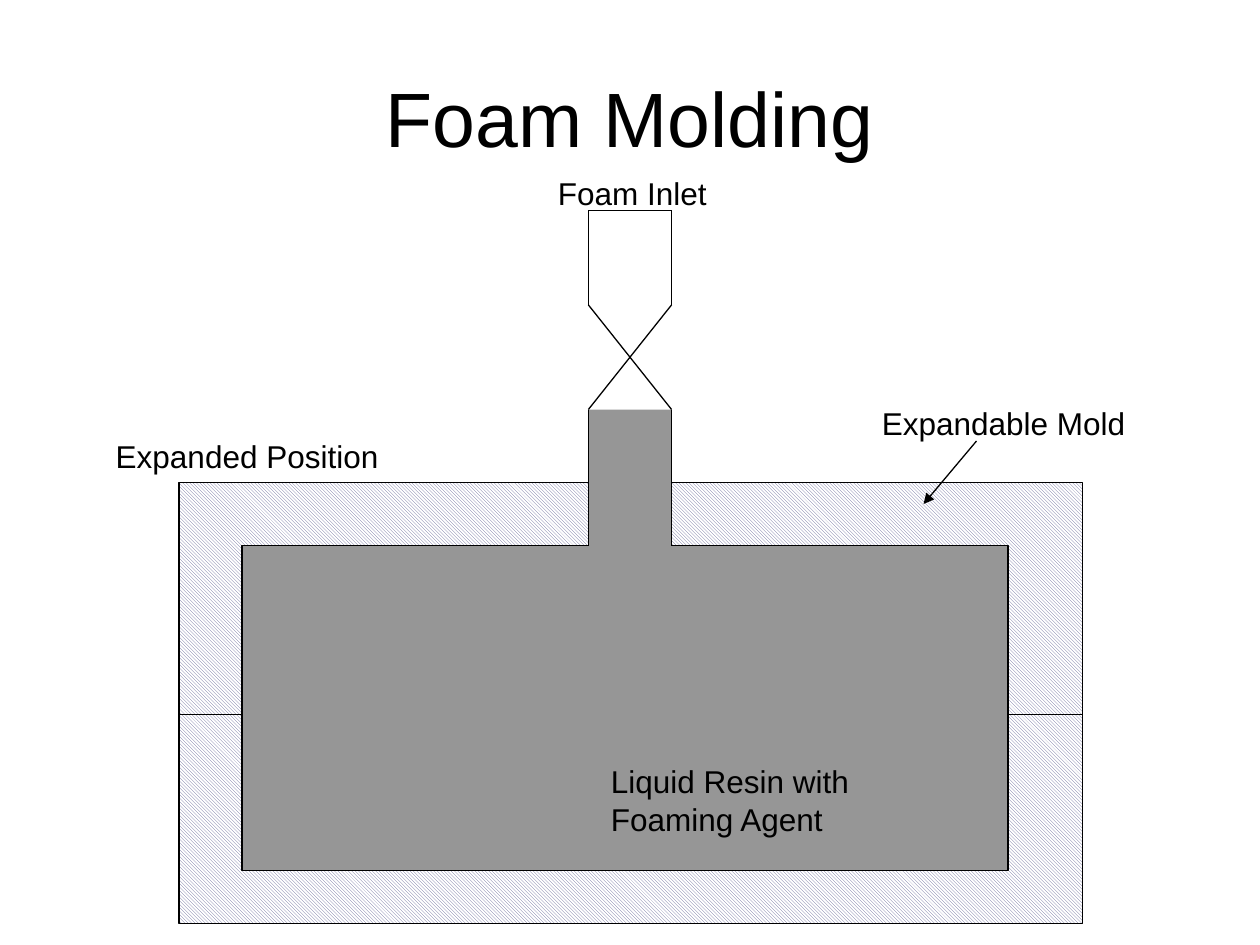
from pptx import Presentation
from pptx.dml.color import RGBColor
from pptx.enum.dml import MSO_PATTERN
from pptx.enum.shapes import MSO_CONNECTOR, MSO_SHAPE
from pptx.enum.text import MSO_ANCHOR, MSO_AUTO_SIZE, PP_ALIGN
from pptx.oxml.ns import qn
from pptx.util import Inches, Pt
from lxml.etree import SubElement

BLACK = RGBColor(0x00, 0x00, 0x00)
WHITE = RGBColor(0xFF, 0xFF, 0xFF)
RESIN_GRAY = RGBColor(0x96, 0x96, 0x96)
MOLD_BLUE = RGBColor(0x66, 0x66, 0x99)
FONT = "Arial"
LINE_WIDTH = Pt(0.75)


def add_line(slide, start, end, arrow=False):
    """Draw a thin black line, optionally with an arrowhead at its end."""
    line = slide.shapes.add_connector(
        MSO_CONNECTOR.STRAIGHT, *map(Inches, (*start, *end)))
    line.line.color.rgb = BLACK
    line.line.width = LINE_WIDTH
    properties = line._element.spPr
    if arrow:
        SubElement(properties.find(qn("a:ln")), qn("a:tailEnd"), type="triangle")
    SubElement(properties, qn("a:effectLst"))


def add_block(slide, left, top, width, height, outlined=True):
    """Draw a gray rectangle with or without a black outline."""
    block = slide.shapes.add_shape(
        MSO_SHAPE.RECTANGLE, *map(Inches, (left, top, width, height)))
    block.shadow.inherit = False
    block.fill.solid()
    block.fill.fore_color.rgb = RESIN_GRAY
    if outlined:
        block.line.color.rgb = BLACK
        block.line.width = LINE_WIDTH
    else:
        block.line.fill.background()
    return block


def add_text(slide, left, top, width, height, lines, size=18):
    """Place lines of black text and return their frame."""
    box = slide.shapes.add_textbox(*map(Inches, (left, top, width, height)))
    frame = box.text_frame
    frame.word_wrap = False
    frame.auto_size = MSO_AUTO_SIZE.SHAPE_TO_FIT_TEXT
    frame.text = "\n".join(lines)
    for paragraph in frame.paragraphs:
        paragraph.font.name = FONT
        paragraph.font.size = Pt(size)
        paragraph.font.color.rgb = BLACK
    return frame


def add_title(slide, left, top, width, height):
    """Place the centred slide title."""
    frame = add_text(slide, left, top, width, height, ["Foam Molding"], size=44)
    frame.auto_size = MSO_AUTO_SIZE.NONE
    frame.word_wrap = True
    frame.vertical_anchor = MSO_ANCHOR.MIDDLE
    frame.paragraphs[0].alignment = PP_ALIGN.CENTER


def add_mold(slide, left, top, width, height):
    """Draw the hatched mold, its resin cavity and the parting lines."""
    right = left + width
    cavity_left, cavity_right = left + 0.5, right - 0.59
    parting = top + 1.84
    mold = add_block(slide, left, top, width, height)
    mold.fill.patterned()
    mold.fill.pattern = MSO_PATTERN.DARK_DOWNWARD_DIAGONAL
    mold.fill.fore_color.rgb = MOLD_BLUE
    mold.fill.back_color.rgb = WHITE
    add_block(slide, cavity_left, top + 0.5, cavity_right - cavity_left, 2.58)
    add_line(slide, (cavity_left, parting), (left, parting))
    add_line(slide, (right, parting), (cavity_right, parting))


def add_inlet(slide, left, top, width, height):
    """Draw the open inlet, the crossed valve and the filled channel."""
    right = left + width
    valve_top, valve_bottom = top + 0.75, top + 1.58
    cavity_top = top + height
    add_block(slide, left, valve_bottom, width, 1.42, outlined=False)
    for side, opposite in ((left, right), (right, left)):
        add_line(slide, (side, cavity_top), (side, valve_bottom))
        add_line(slide, (side, valve_bottom), (opposite, valve_top))
        add_line(slide, (side, valve_top), (side, top))
    add_line(slide, (left, top), (right, top))


def add_labels(slide, left, top):
    """Name the parts and point an arrow at the mold."""
    labels = (
        (3.51, 0, 1.4, 0.4, ["Foam Inlet"]),
        (6.08, 1.83, 2.15, 0.4, ["Expandable Mold"]),
        (3.93, 4.67, 2.18, 0.7, ["Liquid Resin with", "Foaming Agent"]),
        (0, 2.09, 2.32, 0.4, ["Expanded Position"]),
    )
    for across, down, width, height, lines in labels:
        add_text(slide, left + across, top + down, width, height, lines)
    add_line(slide, (left + 6.93, top + 2.17), (left + 6.51, top + 2.67), arrow=True)


def main():
    """Build and save the foam molding slide."""
    presentation = Presentation()
    presentation.slide_width = Inches(10)
    presentation.slide_height = Inches(7.5)
    slide = presentation.slides.add_slide(presentation.slide_layouts[6])
    add_title(slide, 0.5, 0.3, 9, 1.25)
    add_mold(slide, 1.42, 3.83, 7.17, 3.5)
    add_inlet(slide, 4.67, 1.67, 0.66, 2.66)
    add_labels(slide, 0.82, 1.33)
    presentation.save("out.pptx")


if __name__ == "__main__":
    main()
